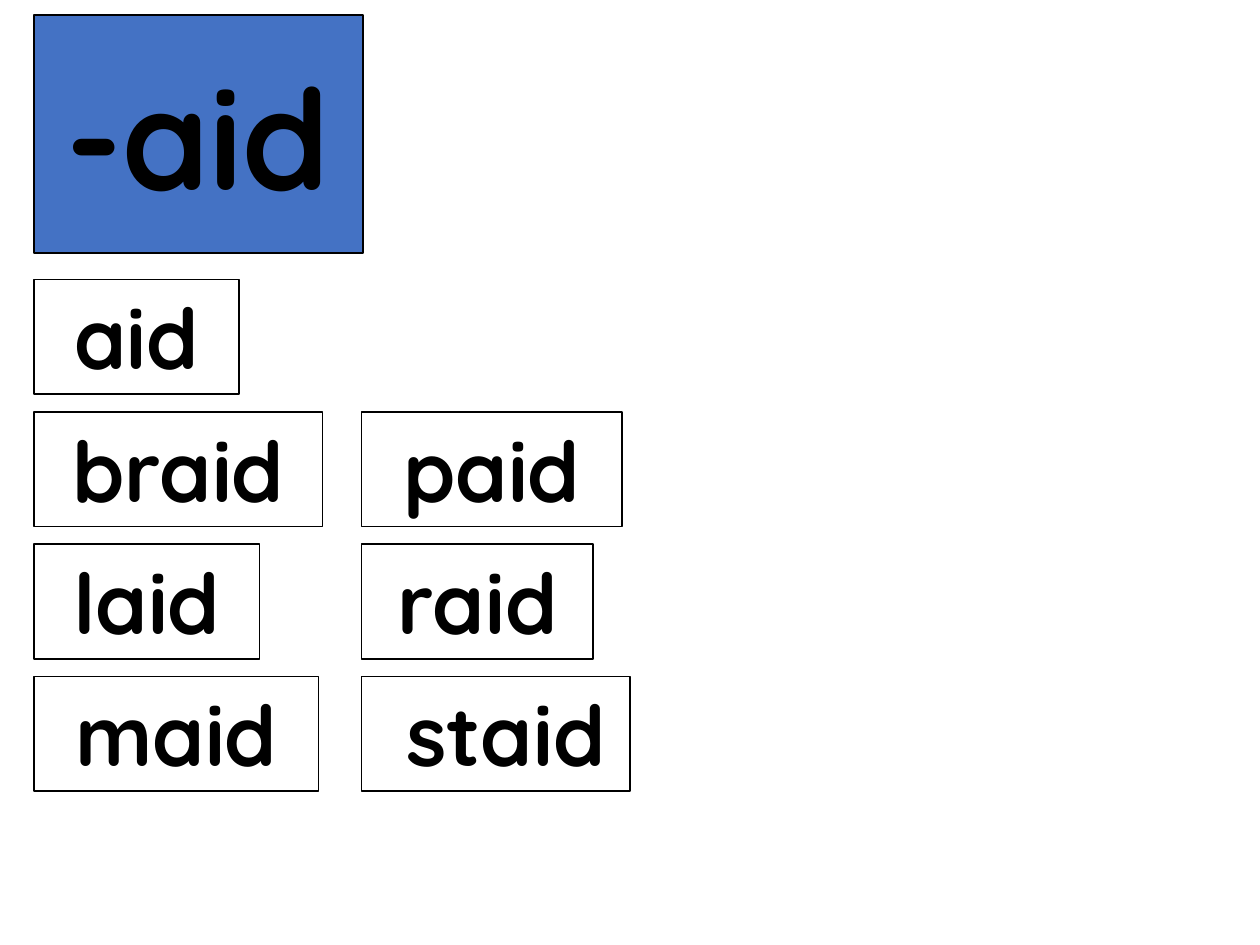
from pptx import Presentation
from pptx.dml.color import RGBColor
from pptx.enum.shapes import MSO_SHAPE
from pptx.enum.text import MSO_ANCHOR, MSO_AUTO_SIZE, PP_ALIGN
from pptx.util import Pt

RECTANGLE = MSO_SHAPE.RECTANGLE
TOP, MIDDLE = MSO_ANCHOR.TOP, MSO_ANCHOR.MIDDLE
CENTER = PP_ALIGN.CENTER
NO_AUTO_SIZE = MSO_AUTO_SIZE.NONE

# Content: each column has a left edge, a first row and (word, card width) pairs
WORD_FAMILY = "-aid"
WORD_COLUMNS = [
    (206.6, 1, [("paid", 149), ("raid", 132.5), ("staid", 153.4)]),
    (19.4, 0, [("aid", 117.4), ("braid", 164.9), ("laid", 128.9), ("maid", 162.7)]),
]
EXTRA_INSET = {"staid": 11.4}

COLORS = {"card": "FFFFFF", "family": "4472C4", "ink": "000000"}
FONT = "Quicksand"
INSET = 7.2
FIRST_TOP, ROW_STEP, CARD_HEIGHT = 159.8, 75.6, 65.5


def color(name):
    return RGBColor.from_string(COLORS[name])


def add_card(slide, text, left, top, width, height, *, fill="card", size=48,
             anchor=TOP, wrap=False, left_inset=INSET):
    shape = slide.shapes.add_shape(RECTANGLE, Pt(left), Pt(top), Pt(width), Pt(height))
    shape.shadow.inherit = False
    shape.fill.solid()
    shape.fill.fore_color.rgb = color(fill)
    shape.line.color.rgb = color("ink")
    shape.line.width = Pt(1)

    frame = shape.text_frame
    frame.auto_size = NO_AUTO_SIZE
    frame.word_wrap = wrap
    frame.vertical_anchor = anchor
    frame.margin_left = Pt(left_inset)
    paragraph = frame.paragraphs[0]
    paragraph.alignment = CENTER
    run = paragraph.add_run()
    run.text = text
    run.font.name = FONT
    run.font.size = Pt(size)
    run.font.bold = True
    run.font.color.rgb = color("ink")


def main():
    presentation = Presentation()
    presentation.slide_width, presentation.slide_height = Pt(720), Pt(540)
    slide = presentation.slides.add_slide(presentation.slide_layouts[6])

    # Word cards
    for left, first_row, words in WORD_COLUMNS:
        for row, (word, width) in enumerate(words, first_row):
            add_card(slide, word, left, FIRST_TOP + row * ROW_STEP, width, CARD_HEIGHT,
                     left_inset=INSET + EXTRA_INSET.get(word, 0))

    # Word family heading
    add_card(slide, WORD_FAMILY, 19.4, 8.6, 187.9, 136.1,
             fill="family", size=80, anchor=MIDDLE, wrap=True)

    presentation.save("out.pptx")


if __name__ == "__main__":
    main()
